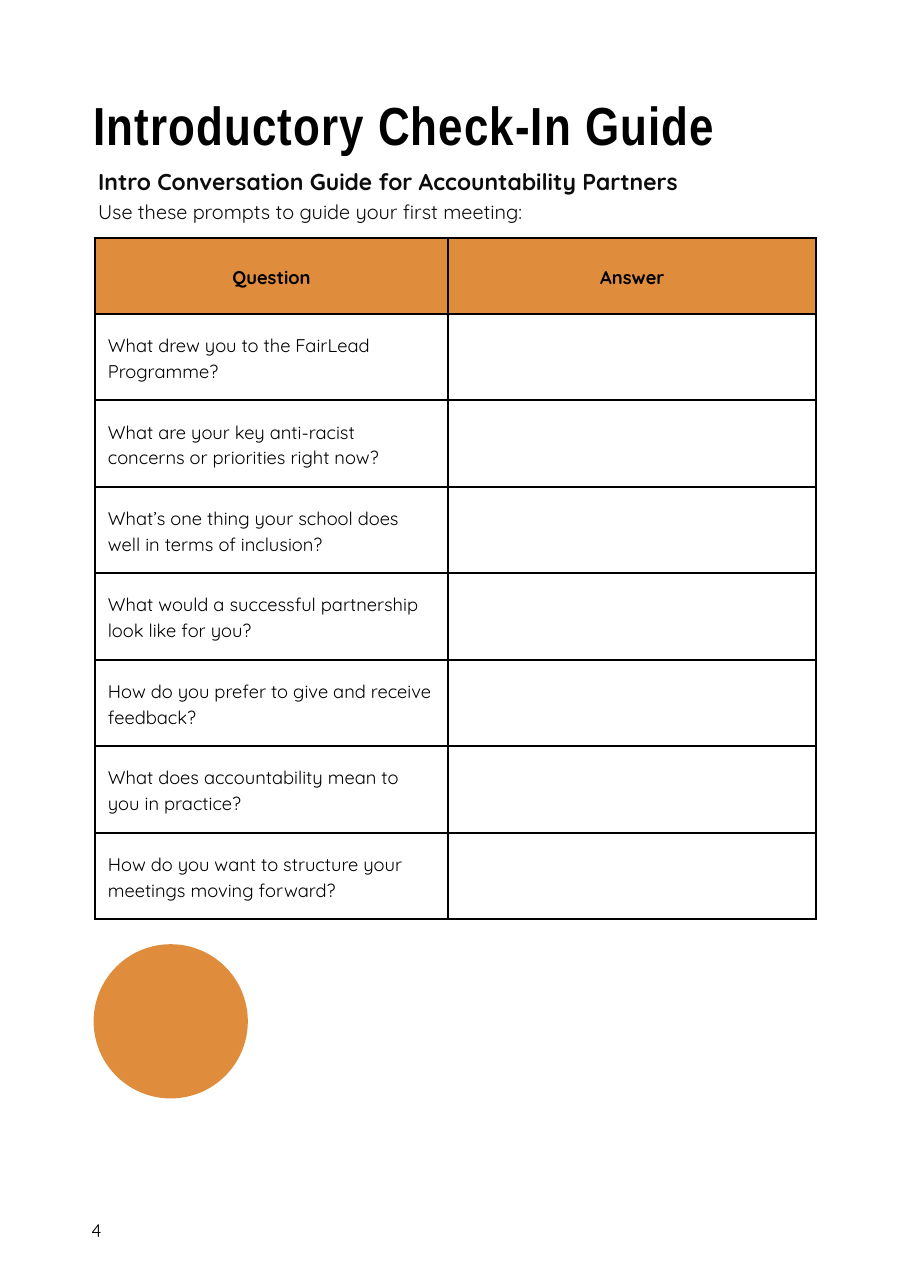
from lxml import etree
from pptx import Presentation
from pptx.dml.color import RGBColor
from pptx.enum.shapes import MSO_SHAPE as Shape
from pptx.enum.text import MSO_ANCHOR as Anchor, PP_ALIGN as Align
from pptx.oxml.ns import qn
from pptx.util import Pt

# Content
TITLE = "Introductory Check-In Guide"
SUBTITLE = "Intro Conversation Guide for Accountability Partners"
INSTRUCTION = "Use these prompts to guide your first meeting:"
PAGE_NUMBER = "4"
HEADERS = ["Question", "Answer"]
QUESTIONS = [
    "What drew you to the FairLead Programme?",
    "What are your key anti-racist concerns or priorities right now?",
    "What’s one thing your school does well in terms of inclusion?",
    "What would a successful partnership look like for you?",
    "How do you prefer to give and receive feedback?",
    "What does accountability mean to you in practice?",
    "How do you want to structure your meetings moving forward?",
]

# Style and layout, 200 px to the inch
BLACK = RGBColor(0, 0, 0)
NEAR_BLACK = RGBColor(0x0C, 0x0C, 0x0C)
ORANGE = RGBColor(0xDF, 0x8C, 0x3C)
BODY_FONT, TITLE_FONT = "Quicksand", "Arial Narrow"
EMU_PER_PX = 4572
SLIDE_SIZE = (1652, 2338)
TITLE_BOX = (170, 166, 1332, 116)
INTRO_BOX = (178, 296, 1322, 110)
PAGE_BOX = (166, 2206, 280, 50)
CIRCLE_BOX = (170, 1714, 280, 280)
TABLE_LEFT, TABLE_TOP = 172, 432
COLUMN_WIDTHS = [642, 668]
ROW_HEIGHTS = [138] + [157] * len(QUESTIONS)
CELL_MARGIN = 24
BORDER_WIDTH = Pt(1.5)


def px(*lengths):
    return [length * EMU_PER_PX for length in lengths]


def write(paragraph, text, size=12, leading=16.8, font=BODY_FONT,
          color=BLACK, bold=False, align=Align.LEFT, spacing=0):
    paragraph.alignment = align
    paragraph.line_spacing = Pt(leading)
    run = paragraph.add_run()
    run.text = text
    run.font.name, run.font.size, run.font.bold = font, Pt(size), bold
    run.font.color.rgb = color
    if spacing:
        run.font._element.set("spc", str(round(spacing * 100)))


def add_text_frame(slide, box):
    frame = slide.shapes.add_textbox(*px(*box)).text_frame
    frame.word_wrap = True
    frame.margin_left = frame.margin_right = 0
    frame.margin_top = frame.margin_bottom = 0
    return frame


def add_borders(cell):
    properties = cell._tc.get_or_add_tcPr()
    for side in ("a:lnL", "a:lnR", "a:lnT", "a:lnB"):
        line = etree.SubElement(properties, qn(side), w=str(BORDER_WIDTH))
        fill = etree.SubElement(line, qn("a:solidFill"))
        etree.SubElement(fill, qn("a:srgbClr"), val=str(BLACK))


def add_question_table(slide):
    rows = [HEADERS] + [[question, ""] for question in QUESTIONS]
    size = (sum(COLUMN_WIDTHS), sum(ROW_HEIGHTS))
    table = slide.shapes.add_table(
        len(rows), len(HEADERS), *px(TABLE_LEFT, TABLE_TOP, *size)).table
    for column, width in zip(table.columns, px(*COLUMN_WIDTHS)):
        column.width = width
    for row, height in zip(table.rows, px(*ROW_HEIGHTS)):
        row.height = height

    for row_index, texts in enumerate(rows):
        is_header = row_index == 0
        for column_index, text in enumerate(texts):
            cell = table.cell(row_index, column_index)
            margin, = px(CELL_MARGIN)
            cell.margin_left = cell.margin_right = margin
            cell.margin_top = cell.margin_bottom = margin
            cell.vertical_anchor = Anchor.MIDDLE
            add_borders(cell)
            if is_header:
                cell.fill.solid()
                cell.fill.fore_color.rgb = ORANGE
            else:
                cell.fill.background()
            if text:
                write(cell.text_frame.paragraphs[0], text, bold=is_header,
                      align=Align.CENTER if is_header else Align.LEFT)


def main():
    presentation = Presentation()
    presentation.slide_width, presentation.slide_height = px(*SLIDE_SIZE)
    slide = presentation.slides.add_slide(presentation.slide_layouts[6])

    # Page number
    write(add_text_frame(slide, PAGE_BOX).paragraphs[0], PAGE_NUMBER)

    # Heading and introduction
    intro = add_text_frame(slide, INTRO_BOX)
    write(intro.paragraphs[0], SUBTITLE, size=15, leading=21,
          color=NEAR_BLACK, bold=True)
    write(intro.add_paragraph(), INSTRUCTION, size=13, leading=18.2,
          color=NEAR_BLACK)
    write(add_text_frame(slide, TITLE_BOX).paragraphs[0], TITLE, size=35,
          leading=42, font=TITLE_FONT, bold=True, spacing=0.7)

    # Questions and answers
    add_question_table(slide)

    # Orange circle
    circle = slide.shapes.add_shape(Shape.OVAL, *px(*CIRCLE_BOX))
    circle.shadow.inherit = False
    circle.fill.solid()
    circle.fill.fore_color.rgb = ORANGE
    circle.line.fill.background()

    presentation.save("out.pptx")


if __name__ == "__main__":
    main()
